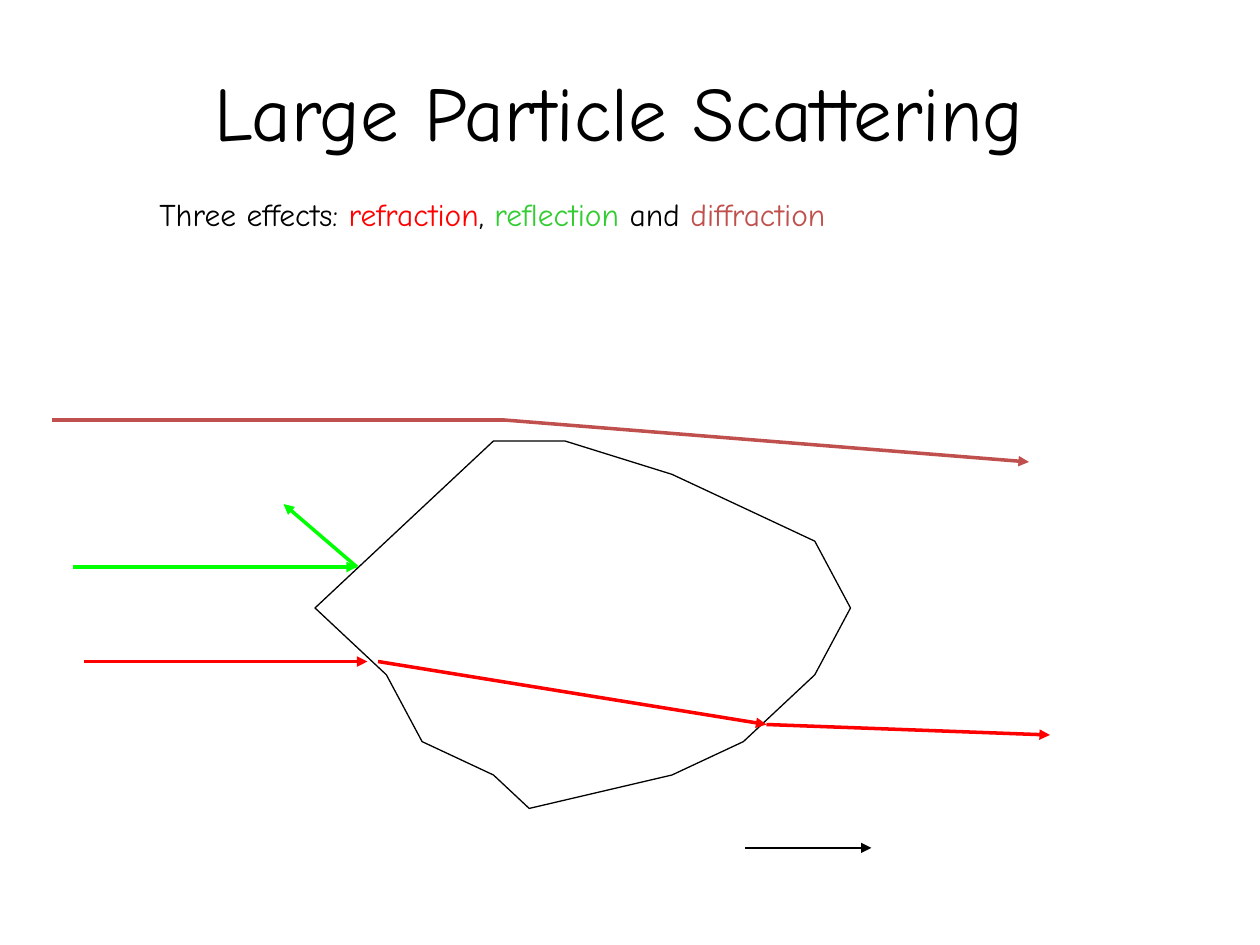
from lxml.etree import SubElement
from pptx import Presentation
from pptx.dml.color import RGBColor
from pptx.enum.shapes import MSO_CONNECTOR as Connector
from pptx.enum.text import MSO_ANCHOR as Anchor, PP_ALIGN as Align
from pptx.oxml.ns import qn
from pptx.util import Pt

FONT = "Comic Neue"
COLORS = {
    "ink": "000000",
    "refraction": "FF0000",
    "reflection": "33CC33",
    "reflected ray": "00FF00",
    "diffraction": "C0504D",
}
EFFECTS = [
    ("Three effects: ", "ink"),
    ("refraction", "refraction"),
    (", ", "ink"),
    ("reflection", "reflection"),
    (" and ", "ink"),
    ("diffraction", "diffraction"),
]
GRID_COLUMNS, GRID_ROWS = 15, 11
OUTLINE = [
    (1, 4), (3, 2), (5, 0), (7, 0), (10, 1), (12, 2), (14, 3), (15, 5),
    (14, 7), (12, 9), (10, 10), (6, 11), (5, 10), (3, 9), (2, 7), (0, 5),
]


def color(name):
    """Return the named colour."""
    return RGBColor.from_string(COLORS[name])


def add_text(page, box, runs, size, align=Align.LEFT, anchor=Anchor.TOP):
    """Place one paragraph of coloured runs in the box."""
    frame = page.shapes.add_textbox(*map(Pt, box)).text_frame
    frame.word_wrap = True
    frame.vertical_anchor = anchor
    para = frame.paragraphs[0]
    para.alignment = align
    for text, name in runs:
        span = para.add_run()
        span.text = text
        span.font.name = FONT
        span.font.size = Pt(size)
        span.font.color.rgb = color(name)


def add_particle(page, box):
    """Draw the particle outline on a grid that fills the box."""
    left, top, width, height = box
    scale = Pt(width / GRID_COLUMNS), Pt(height / GRID_ROWS)
    builder = page.shapes.build_freeform(*OUTLINE[0], scale=scale)
    builder.add_line_segments(OUTLINE[1:], close=True)
    particle = builder.convert_to_shape(Pt(left), Pt(top))
    particle.shadow.inherit = False
    particle.fill.background()
    particle.line.color.rgb = color("ink")
    particle.line.width = Pt(0.75)


def add_rays(page, corner, rays, name, width=2):
    """Group rays of (start, end, has arrowhead) placed from the corner."""
    left, top = corner
    group = page.shapes.add_group_shape()
    for (x1, y1), (x2, y2), has_arrow in rays:
        ray = group.shapes.add_connector(
            Connector.STRAIGHT,
            Pt(left + x1), Pt(top + y1), Pt(left + x2), Pt(top + y2),
        )
        ray.line.color.rgb = color(name)
        ray.line.width = Pt(width)
        if has_arrow:
            SubElement(ray.line._get_or_add_ln(), qn("a:tailEnd"), type="triangle")
        SubElement(ray._element.spPr, qn("a:effectLst"))


def add_scattering(page, box):
    """Draw the particle and the rays around it inside the box."""
    left, top = box[:2]
    add_particle(page, (left + 150, top + 12, 306, 210))
    bend = (258, 0)
    add_rays(page, (left, top),
             [(bend, (558, 24), True), (bend, (0, 0), False)], "diffraction")
    hit = (162, 36)
    add_rays(page, (left + 12, top + 48),
             [((0, 36), hit, True), (hit, (120, 0), True)], "reflected ray")
    leave = (390, 36)
    add_rays(page, (left + 18, top + 138),
             [((0, 0), (162, 0), True), ((168, 0), leave, True),
              (leave, (552, 42), True)], "refraction")
    add_rays(page, (left + 396, top + 244.5),
             [((0, 0), (72, 0), True)], "ink", 0.75)


def main():
    """Build the slide and save it."""
    deck = Presentation()
    deck.slide_width, deck.slide_height = Pt(720), Pt(540)
    page = deck.slides.add_slide(deck.slide_layouts[6])
    add_text(page, (48, 18, 612, 90), [("Large Particle Scattering", "ink")],
             44, Align.CENTER, Anchor.MIDDLE)
    add_text(page, (84, 108, 582, 65.5), EFFECTS, 18)
    add_scattering(page, (30, 240, 570, 244.5))
    deck.save("out.pptx")


if __name__ == "__main__":
    main()
